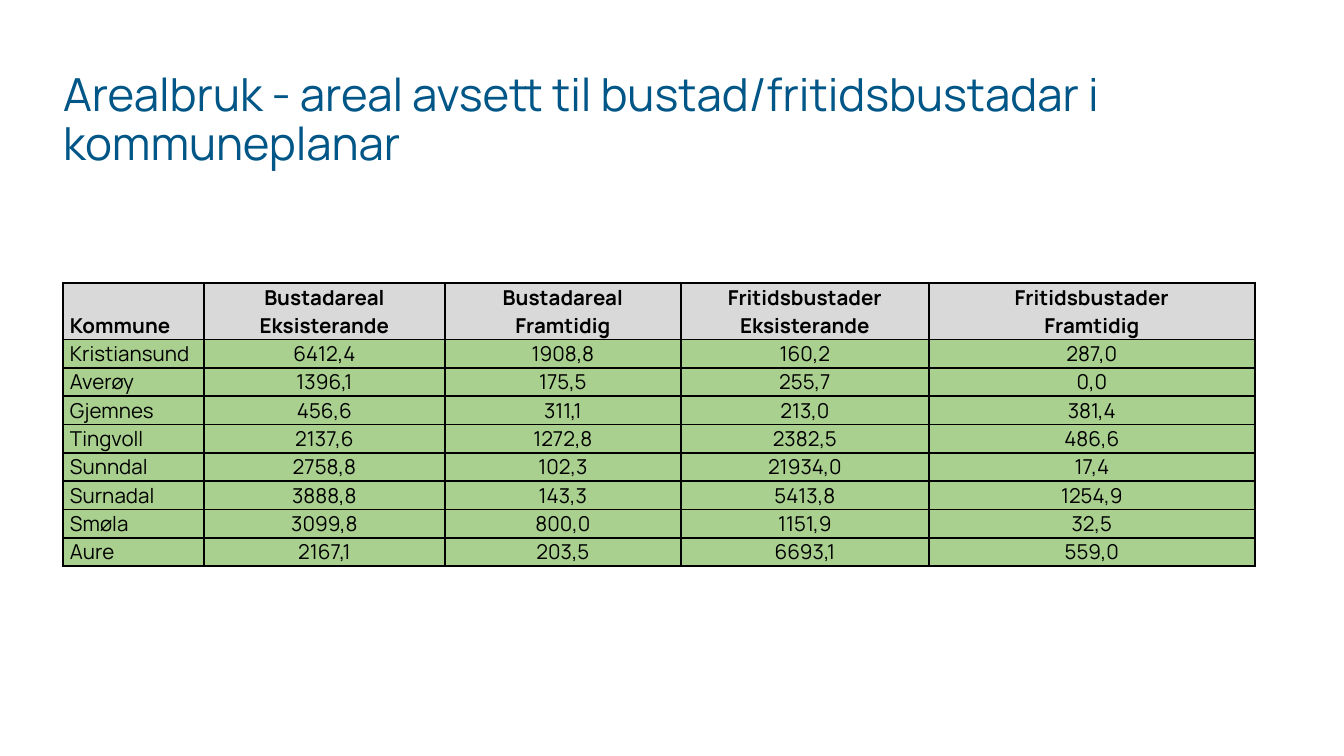
from dataclasses import dataclass

from lxml import etree
from pptx import Presentation
from pptx import util as u
from pptx.dml.color import RGBColor
from pptx.enum import text
from pptx.oxml.ns import qn

PX = 6804


@dataclass(frozen=True)
class Theme:
    font: str = "Manrope"
    title_color: str = "005686"
    text_color: str = "000000"
    border_color: str = "000000"
    header_fill: str = "D9D9D9"
    body_fill: str = "A9D08E"
    title_size: float = 24.4
    table_size: float = 11
    border_width: float = 1


THEME = Theme()
TITLE = "Arealbruk - areal avsett til bustad/fritidsbustadar i kommuneplanar"
COLUMN_WIDTHS = (141, 241, 236, 248, 326)
HEADER_HEIGHT = 56
ROW_HEIGHT = 28
ROWS = (
    ("Kommune", "Bustadareal\nEksisterande", "Bustadareal\nFramtidig",
     "Fritidsbustader\nEksisterande", "Fritidsbustader\nFramtidig"),
    ("Kristiansund", "6412,4", "1908,8", "160,2", "287,0"),
    ("Averøy", "1396,1", "175,5", "255,7", "0,0"),
    ("Gjemnes", "456,6", "311,1", "213,0", "381,4"),
    ("Tingvoll", "2137,6", "1272,8", "2382,5", "486,6"),
    ("Sunndal", "2758,8", "102,3", "21934,0", "17,4"),
    ("Surnadal", "3888,8", "143,3", "5413,8", "1254,9"),
    ("Smøla", "3099,8", "800,0", "1151,9", "32,5"),
    ("Aure", "2167,1", "203,5", "6693,1", "559,0"),
)


def px(count):
    return u.Emu(count * PX)


def set_attributes(target, values):
    for name, value in values.items():
        setattr(target, name, value)


def format_paragraph(paragraph, size, color, alignment, bold=False):
    paragraph.alignment = alignment
    set_attributes(paragraph.font, {"name": THEME.font, "size": u.Pt(size), "bold": bold})
    paragraph.font.color.rgb = RGBColor.from_string(color)


def add_title(slide):
    title = slide.shapes.title
    set_attributes(title, {"left": px(58), "top": px(64), "width": px(1230), "height": px(186)})
    frame = title.text_frame
    frame.text = TITLE
    set_attributes(frame, {
        "word_wrap": True, "auto_size": text.MSO_AUTO_SIZE.NONE,
        "vertical_anchor": text.MSO_ANCHOR.TOP,
        "margin_left": px(5), "margin_right": px(5),
        "margin_top": px(8), "margin_bottom": px(3),
    })
    paragraph = frame.paragraphs[0]
    paragraph.line_spacing = 0.9
    format_paragraph(paragraph, THEME.title_size, THEME.title_color, text.PP_ALIGN.LEFT)


def add_borders(cell):
    properties = cell._tc.get_or_add_tcPr()
    for side in ("a:lnL", "a:lnR", "a:lnT", "a:lnB"):
        line = etree.SubElement(properties, qn(side), w=str(u.Pt(THEME.border_width)))
        fill = etree.SubElement(line, qn("a:solidFill"))
        etree.SubElement(fill, qn("a:srgbClr"), val=THEME.border_color)


def format_cell(cell, content, is_header, is_name):
    cell.text = content
    set_attributes(cell, {
        "vertical_anchor": text.MSO_ANCHOR.BOTTOM,
        "margin_left": px(7), "margin_right": px(7),
        "margin_top": 0, "margin_bottom": 0,
    })
    add_borders(cell)
    cell.fill.solid()
    cell.fill.fore_color.rgb = RGBColor.from_string(
        THEME.header_fill if is_header else THEME.body_fill)
    alignment = text.PP_ALIGN.LEFT if is_name else text.PP_ALIGN.CENTER
    for paragraph in cell.text_frame.paragraphs:
        format_paragraph(paragraph, THEME.table_size, THEME.text_color, alignment, is_header)


def add_area_table(slide):
    heights = [HEADER_HEIGHT] + [ROW_HEIGHT] * (len(ROWS) - 1)
    table = slide.shapes.add_table(
        len(ROWS), len(COLUMN_WIDTHS), px(63), px(283),
        px(sum(COLUMN_WIDTHS)), px(sum(heights))).table
    set_attributes(table, {"first_row": False, "horz_banding": False})
    for column, width in zip(table.columns, COLUMN_WIDTHS):
        column.width = px(width)
    for row, height in zip(table.rows, heights):
        row.height = px(height)
    for row_index, row in enumerate(ROWS):
        for column_index, content in enumerate(row):
            format_cell(table.cell(row_index, column_index), content,
                        row_index == 0, column_index == 0)


def main():
    presentation = Presentation()
    set_attributes(presentation, {"slide_width": px(1344), "slide_height": px(756)})
    slide = presentation.slides.add_slide(presentation.slide_layouts[5])
    add_title(slide)
    add_area_table(slide)
    presentation.save("out.pptx")


if __name__ == "__main__":
    main()
